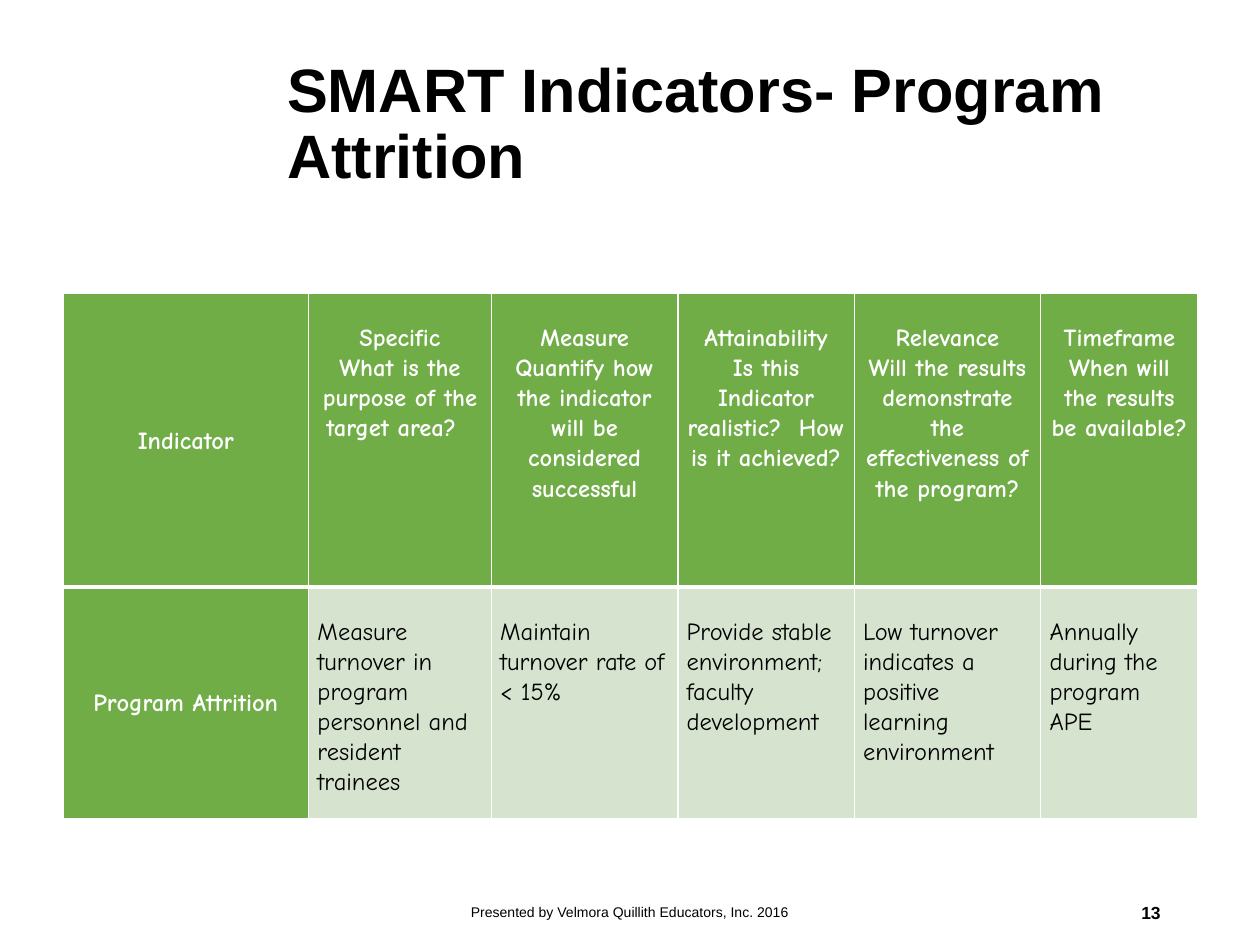
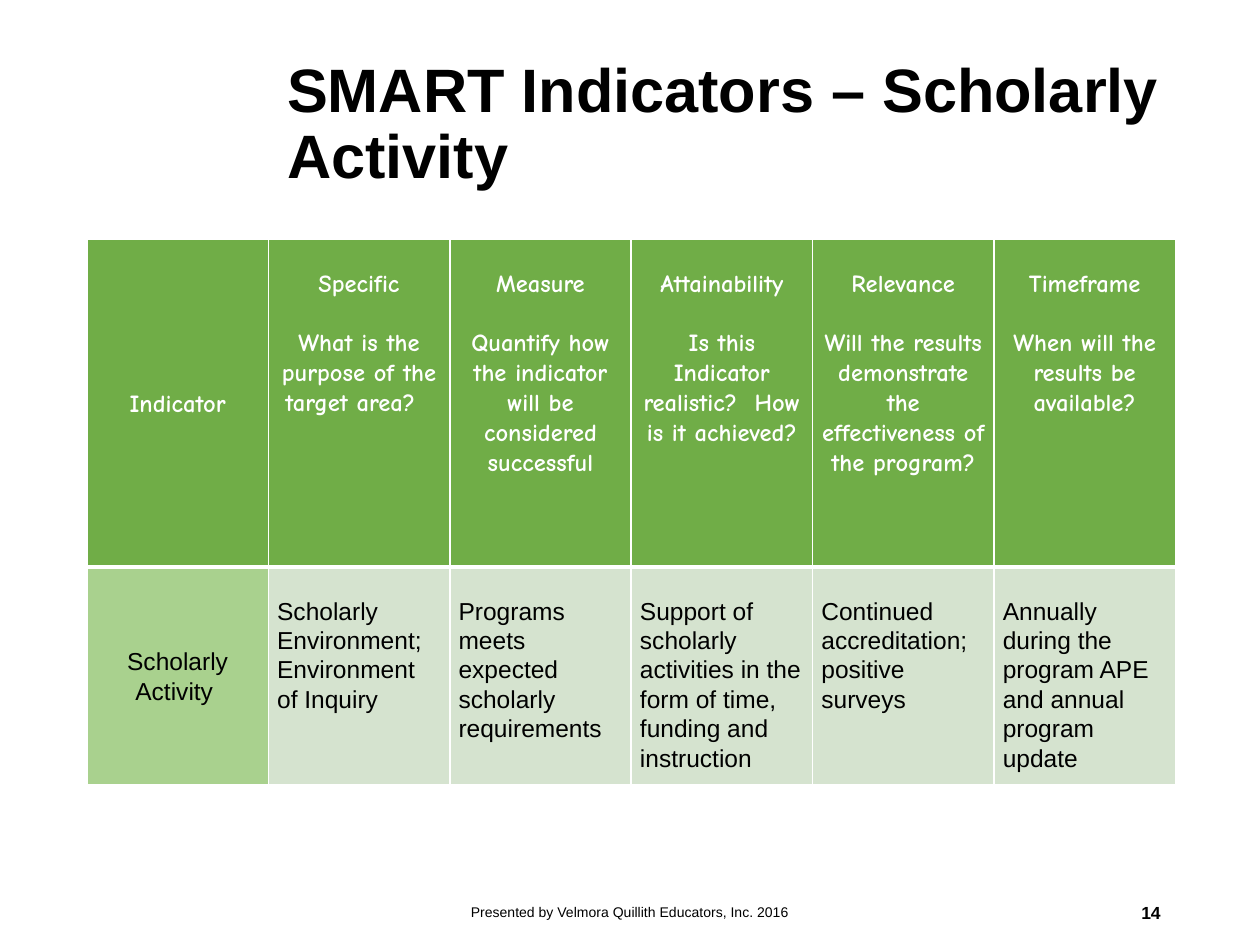
from dataclasses import dataclass

from lxml import etree
from pptx import Presentation
from pptx.dml import color
from pptx.enum import text
from pptx.oxml import ns
from pptx.util import Inches, Pt

GREEN, LIGHT_GREEN, PALE = "70AD47", "A9D18E", "D5E3CF"
WHITE, BLACK = "FFFFFF", "000000"
HAND, SANS = "Comic Neue", "Arial"
LEFT, CENTER, RIGHT = text.PP_ALIGN.LEFT, text.PP_ALIGN.CENTER, text.PP_ALIGN.RIGHT
TOP, MIDDLE = text.MSO_ANCHOR.TOP, text.MSO_ANCHOR.MIDDLE
TOP_GAP = 0.23
FOOTER = "Presented by Velmora Quillith Educators, Inc. 2016"
QUESTIONS = [
    ("Specific", "What is the purpose of the target area?  "),
    ("Measure", "Quantify how the indicator will be considered successful"),
    ("Attainability", "Is this Indicator realistic?  How is it achieved?"),
    ("Relevance", "Will the results demonstrate the effectiveness of the program?"),
    ("Timeframe", "When will the results be available?"),
]


@dataclass(frozen=True)
class Style:
    font: str
    size: float
    color: str = BLACK
    bold: bool = False
    align: int = LEFT
    spacing: float = 1.0
    gap: float = 0


@dataclass(frozen=True)
class Label:
    left: float
    top: float
    width: float
    height: float
    style: Style


@dataclass(frozen=True)
class IndicatorPage:
    number: int
    title: str
    left: float
    top: float
    columns: list[float]
    rows: list[float]
    question_gap: float
    name: str
    name_fill: str
    name_style: Style
    answers: list[str]
    answer_style: Style


TITLE = Label(2.18, 0.27, 7.14, 1.45, Style(SANS, 35, bold=True, spacing=0.9))
CREDIT = Label(3.31, 7.04, 3.38, 0.4, Style(SANS, 8, align=CENTER))
NUMBER = Label(7.06, 7.04, 2.25, 0.4, Style(SANS, 10, bold=True, align=RIGHT))
HEADING = Style(HAND, 14, WHITE, True, CENTER, 1.07)

PAGES = [
    IndicatorPage(
        13, "SMART Indicators- Program Attrition", 0.5, 2.33,
        [1.95, 1.45, 1.48, 1.4, 1.48, 1.25], [2.33, 1.84], 0,
        "Program Attrition", GREEN, HEADING,
        ["Measure turnover in program personnel and resident trainees",
         "Maintain turnover rate of < 15%",
         "Provide stable environment; faculty development",
         "Low turnover indicates a positive learning environment",
         "Annually during the program APE"],
        Style(HAND, 14, spacing=1.07)),
    IndicatorPage(
        14, "SMART Indicators – Scholarly Activity", 0.69, 1.9,
        [1.44] * 6, [2.6, 1.6], TOP_GAP,
        "Scholarly Activity ", LIGHT_GREEN, Style(SANS, 14, align=CENTER, spacing=1.07),
        ["Scholarly Environment; Environment of Inquiry",
         "Programs meets expected scholarly requirements",
         "Support of scholarly activities in the form of time, funding and instruction",
         "Continued accreditation; positive surveys",
         "Annually during the program APE and annual program update"],
        Style(SANS, 14, spacing=1.07)),
]


def rgb(value: str) -> color.RGBColor:
    return color.RGBColor.from_string(value)


def set_all(target, values: dict) -> None:
    for name, value in values.items():
        setattr(target, name, value)


def write(frame, lines: list[str], style: Style) -> None:
    for index, line in enumerate(lines):
        para = frame.add_paragraph() if index else frame.paragraphs[0]
        set_all(para, {"alignment": style.align, "line_spacing": style.spacing})
        if index:
            para.space_before = Inches(style.gap)
        span = para.add_run()
        span.text = line
        set_all(span.font, {"name": style.font, "size": Pt(style.size), "bold": style.bold})
        span.font.color.rgb = rgb(style.color)


def add_label(page, label: Label, words: str) -> None:
    box = page.shapes.add_textbox(
        *map(Inches, (label.left, label.top, label.width, label.height)))
    set_all(box.text_frame, {"word_wrap": True, "vertical_anchor": MIDDLE})
    write(box.text_frame, [words], label.style)


def add_borders(cell, widths: dict[str, float]) -> None:
    properties = cell._tc.get_or_add_tcPr()
    for side, width in widths.items():
        line = etree.SubElement(properties, ns.qn(f"a:ln{side}"), w=str(Pt(width)))
        fill = etree.SubElement(line, ns.qn("a:solidFill"))
        etree.SubElement(fill, ns.qn("a:srgbClr"), val=WHITE)


def fill_cell(cell, lines: list[str], style: Style, fill: str,
              is_header: bool, is_name: bool) -> None:
    add_borders(cell, {"L": 1, "R": 1, "T": 1 if is_header else 3, "B": 3 if is_header else 1})
    cell.fill.solid()
    cell.fill.fore_color.rgb = rgb(fill)
    set_all(cell, {
        "margin_left": Inches(0.07),
        "margin_right": Inches(0.07),
        "margin_top": Inches(0 if is_name else TOP_GAP),
        "margin_bottom": 0,
        "vertical_anchor": MIDDLE if is_name else TOP,
    })
    write(cell.text_frame, lines, style)


def add_indicator_table(page, content: IndicatorPage) -> None:
    table = page.shapes.add_table(
        2, len(content.columns), Inches(content.left), Inches(content.top),
        Inches(sum(content.columns)), Inches(sum(content.rows))).table
    for column, width in zip(table.columns, content.columns):
        column.width = Inches(width)
    for row, height in zip(table.rows, content.rows):
        row.height = Inches(height)
    question = Style(HAND, 14, WHITE, True, CENTER, 1.07, content.question_gap)
    fill_cell(table.cell(0, 0), ["Indicator"], HEADING, GREEN, True, True)
    fill_cell(table.cell(1, 0), [content.name], content.name_style,
              content.name_fill, False, True)
    for column, (lines, answer) in enumerate(zip(QUESTIONS, content.answers), start=1):
        fill_cell(table.cell(0, column), list(lines), question, GREEN, True, False)
        fill_cell(table.cell(1, column), [answer], content.answer_style, PALE, False, False)


def main() -> None:
    deck = Presentation()
    set_all(deck, {"slide_width": Inches(10), "slide_height": Inches(7.5)})
    for content in PAGES:
        page = deck.slides.add_slide(deck.slide_layouts[6])
        add_indicator_table(page, content)
        add_label(page, TITLE, content.title)
        add_label(page, CREDIT, FOOTER)
        add_label(page, NUMBER, str(content.number))
    deck.save("out.pptx")


if __name__ == "__main__":
    main()
